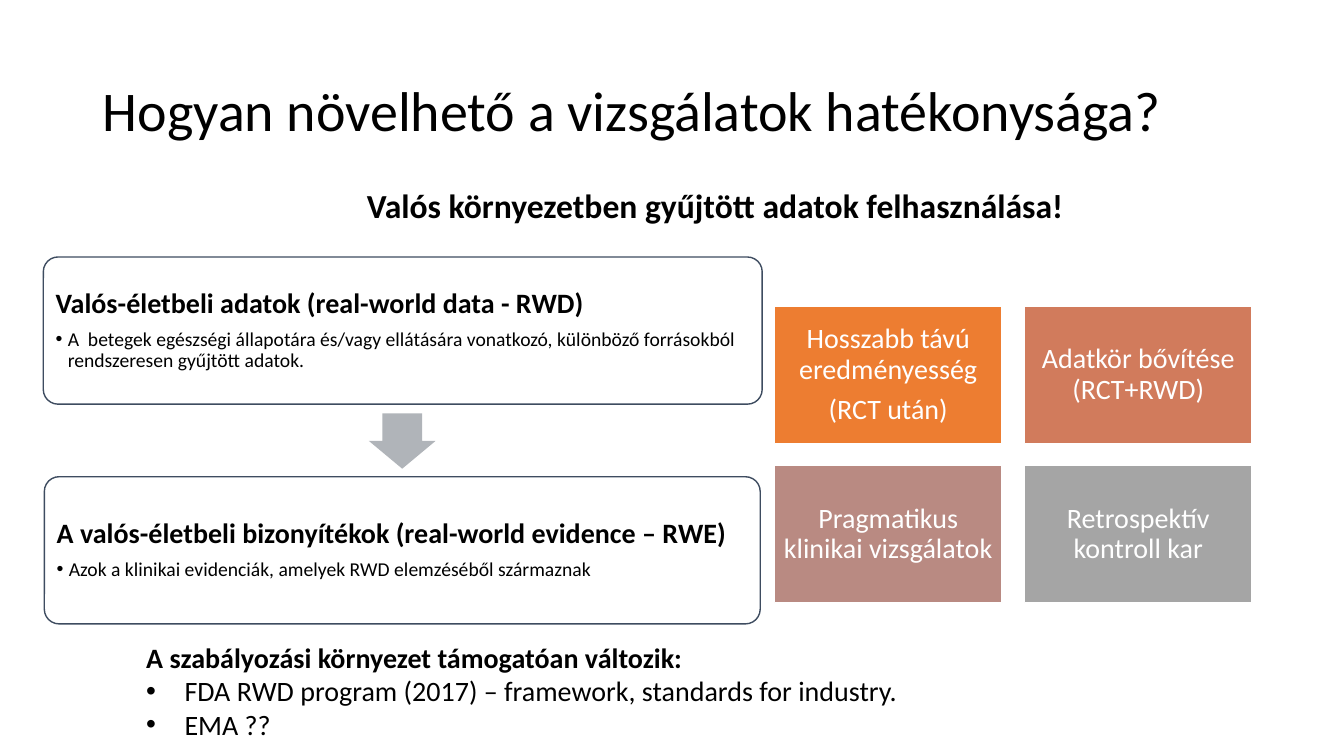
from dataclasses import dataclass

import pptx
import pptx.dml.color
import pptx.enum.shapes
import pptx.enum.text
import pptx.oxml
import pptx.oxml.ns
import pptx.util

EMU_PER_PX = 9144  # 100 px to the inch
FONT = "Calibri"
BLACK, WHITE = "000000", "FFFFFF"
ALIGN = pptx.enum.text.PP_ALIGN
PRESET = pptx.enum.shapes.MSO_SHAPE


@dataclass
class Line:
    text: str
    size: int
    bold: bool = False
    color: str = BLACK
    align: ALIGN = ALIGN.LEFT
    spacing: float = 1.0
    after: float = 0  # points
    hang: int = 0  # px; a bullet is shown when set


@dataclass
class Panel:
    left: int
    top: int
    width: int
    heading: str
    detail: str


@dataclass
class Tile:
    column: int
    row: int
    fill: str
    texts: tuple[str, ...]


def px(length: int) -> pptx.util.Emu:
    return pptx.util.Emu(length * EMU_PER_PX)


def rgb(color: str) -> pptx.dml.color.RGBColor:
    return pptx.dml.color.RGBColor.from_string(color)


def place(box, left: int, top: int, width: int, height: int) -> None:
    box.left, box.top, box.width, box.height = map(px, (left, top, width, height))


def set_bullet(para, hang: int) -> None:
    props = para._p.get_or_add_pPr()
    props.set("marL", str(px(hang)))
    props.set("indent", str(-px(hang)))
    marks = ('<a:buFont {} typeface="Arial"/>', '<a:buChar {} char="•"/>') if hang else ("<a:buNone {}/>",)
    for mark in marks:
        props.append(pptx.oxml.parse_xml(mark.format(pptx.oxml.ns.nsdecls("a"))))


def write(box, lines: list[Line], middle: bool = False, inset: int | None = None) -> None:
    frame = box.text_frame
    frame.word_wrap = True
    frame.auto_size = pptx.enum.text.MSO_AUTO_SIZE.NONE
    anchor = pptx.enum.text.MSO_ANCHOR
    frame.vertical_anchor = anchor.MIDDLE if middle else anchor.TOP
    if inset is not None:
        frame.margin_left = frame.margin_right = px(inset)
        frame.margin_top = frame.margin_bottom = px(inset)
    for index, line in enumerate(lines):
        para = frame.add_paragraph() if index else frame.paragraphs[0]
        para.text = line.text
        set_bullet(para, line.hang)
        para.alignment = line.align
        para.line_spacing = line.spacing
        para.space_before = pptx.util.Pt(0)
        para.space_after = pptx.util.Pt(line.after)
        para.font.name = FONT
        para.font.size = pptx.util.Pt(line.size)
        para.font.bold = line.bold
        para.font.color.rgb = rgb(line.color)


def add_box(page, preset: PRESET, left: int, top: int, width: int, height: int,
            fill: str, outline: str | None = None):
    box = page.shapes.add_shape(preset, *map(px, (left, top, width, height)))
    box.shadow.inherit = False
    box.fill.solid()
    box.fill.fore_color.rgb = rgb(fill)
    if outline:
        box.line.color.rgb = rgb(outline)
        box.line.width = pptx.util.Pt(1)
    else:
        box.line.fill.background()
    return box


def add_panel(page, panel: Panel) -> None:
    box = add_box(page, PRESET.ROUNDED_RECTANGLE, panel.left, panel.top, panel.width, 146, WHITE, "3E4C60")
    box.adjustments[0] = 0.1
    write(box, [
        Line(panel.heading, 20, bold=True, spacing=0.9, after=7),
        Line(panel.detail, 14, spacing=0.9, after=2, hang=12),
    ], middle=True, inset=8)


def add_tile(page, tile: Tile) -> None:
    left, top = 768 + 248 * tile.column, 304 + 158 * tile.row
    box = add_box(page, PRESET.RECTANGLE, left, top, 226, 136, tile.fill, WHITE)
    write(box, [Line(text, 20, color=WHITE, align=ALIGN.CENTER, spacing=0.9, after=7)
                for text in tile.texts], middle=True, inset=8)


PANELS = [
    Panel(43, 255, 713, "Valós-életbeli adatok (real-world data - RWD)",
          "A  betegek egészségi állapotára és/vagy ellátására vonatkozó, "
          "különböző forrásokból rendszeresen gyűjtött adatok."),
    Panel(44, 473, 710, "A valós-életbeli bizonyítékok (real-world evidence – RWE)",
          "Azok a klinikai evidenciák, amelyek RWD elemzéséből származnak"),
]
TILES = [
    Tile(0, 0, "ED7D31", ("Hosszabb távú eredményesség", "(RCT után)")),
    Tile(1, 0, "D17B5C", ("Adatkör bővítése (RCT+RWD)",)),
    Tile(0, 1, "B98A82", ("Pragmatikus klinikai vizsgálatok",)),
    Tile(1, 1, "A5A5A5", ("Retrospektív kontroll kar",)),
]


def main() -> None:
    deck = pptx.Presentation()
    deck.slide_width, deck.slide_height = px(1333), px(750)
    page = deck.slides.add_slide(deck.slide_layouts[1])

    # Title and subtitle
    title = page.shapes.title
    place(title, 92, 40, 1150, 145)
    write(title, [Line("Hogyan növelhető a vizsgálatok hatékonysága?", 40, spacing=0.9)], middle=True)
    subtitle = page.shapes.add_textbox(*map(px, (354, 179, 723, 50)))
    write(subtitle, [Line("Valós környezetben gyűjtött adatok felhasználása!", 24, bold=True)])

    # From data to evidence
    for panel in PANELS:
        add_panel(page, panel)
    arrow = add_box(page, PRESET.DOWN_ARROW, 366, 410, 66, 55, "B0B4B9")
    arrow.adjustments[0], arrow.adjustments[1] = 0.6, 0.5

    # Uses of real-world data
    for tile in TILES:
        add_tile(page, tile)

    # Regulatory environment
    regulation = page.placeholders[1]
    place(regulation, 135, 630, 788, 111)
    write(regulation, [
        Line("A szabályozási környezet támogatóan változik:", 20, bold=True),
        Line("FDA RWD program (2017) – framework, standards for industry.", 20, hang=38),
        Line("EMA ??", 20, hang=38),
    ])

    deck.save("out.pptx")


if __name__ == "__main__":
    main()
